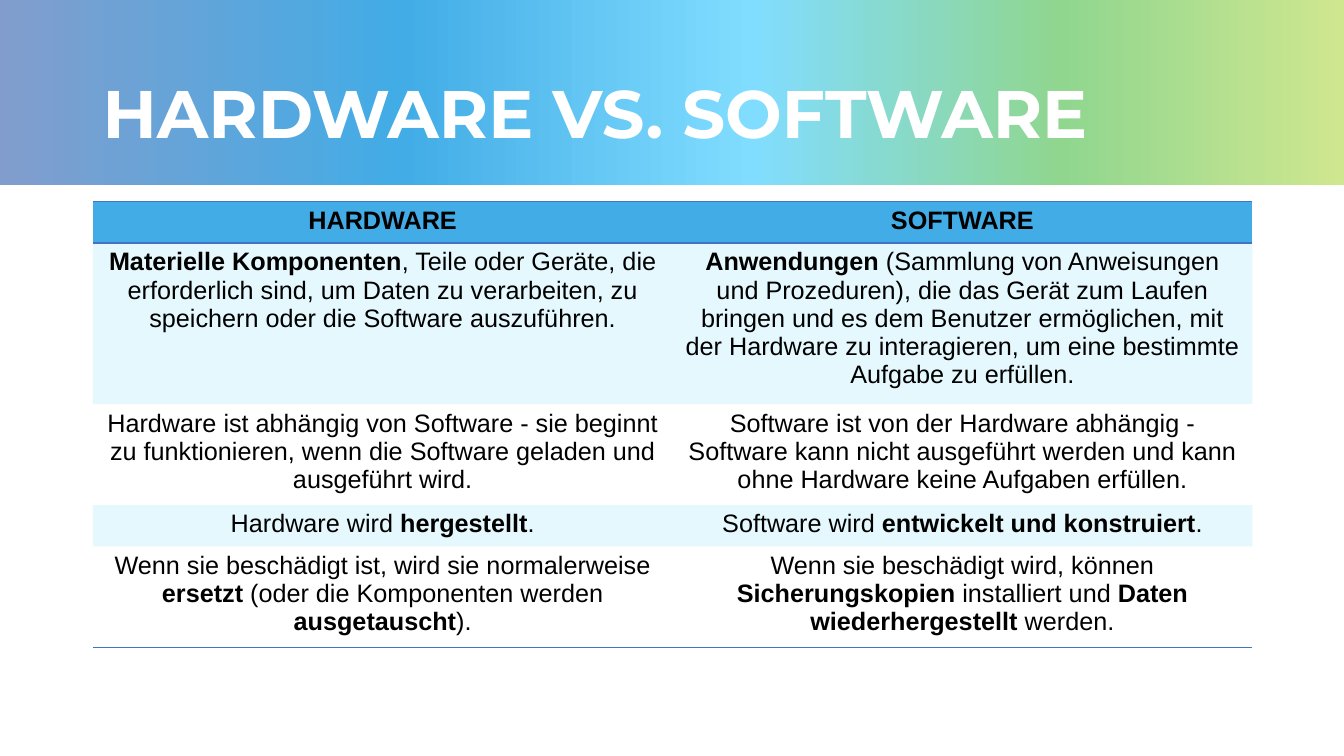
from dataclasses import dataclass

from lxml import etree
from pptx import Presentation
from pptx.dml.color import RGBColor
from pptx.enum.shapes import MSO_SHAPE
from pptx.enum.text import MSO_ANCHOR, PP_ALIGN
from pptx.oxml.ns import qn
from pptx.slide import Slide
from pptx.table import Table, _Cell
from pptx.util import Inches, Pt

RECTANGLE = MSO_SHAPE.RECTANGLE
MIDDLE = MSO_ANCHOR.MIDDLE
CENTER = PP_ALIGN.CENTER

WHITE = RGBColor(0xFF, 0xFF, 0xFF)
BLACK = RGBColor(0x00, 0x00, 0x00)
HEADER_BLUE = RGBColor(0x42, 0xAC, 0xE6)
BAND_BLUE = RGBColor(0x81, 0xDD, 0xFC)
BORDER_BLUE = RGBColor(0x44, 0x72, 0xC4)

PLAIN_TABLE_STYLE = "{2D5ABB26-0587-4C30-8999-92F81FD0307C}"
BAND_OPACITY = 20
MARGIN = 0.92


@dataclass(frozen=True)
class GradientStop:
    percent: int
    color: RGBColor


@dataclass(frozen=True)
class Comparison:
    """One table row; words between ** marks are bold."""
    hardware: str
    software: str


BANNER_STOPS = [
    GradientStop(0, RGBColor(0x81, 0x9D, 0xCD)),
    GradientStop(30, HEADER_BLUE),
    GradientStop(56, RGBColor(0x81, 0xDD, 0xFF)),
    GradientStop(79, RGBColor(0x90, 0xD6, 0x8F)),
    GradientStop(100, RGBColor(0xCF, 0xE7, 0x8F)),
]

COMPARISONS = [
    Comparison("**HARDWARE**", "**SOFTWARE**"),
    Comparison(
        "**Materielle Komponenten**, Teile oder Geräte, die erforderlich sind, "
        "um Daten zu verarbeiten, zu speichern oder die Software auszuführen.",
        "**Anwendungen** (Sammlung von Anweisungen und Prozeduren), die das Gerät "
        "zum Laufen bringen und es dem Benutzer ermöglichen, mit der Hardware zu "
        "interagieren, um eine bestimmte Aufgabe zu erfüllen."),
    Comparison(
        "Hardware ist abhängig von Software - sie beginnt zu funktionieren, "
        "wenn die Software geladen und ausgeführt wird.",
        "Software ist von der Hardware abhängig - Software kann nicht ausgeführt "
        "werden und kann ohne Hardware keine Aufgaben erfüllen."),
    Comparison("Hardware wird **hergestellt**.",
               "Software wird **entwickelt und konstruiert**."),
    Comparison(
        "Wenn sie beschädigt ist, wird sie normalerweise **ersetzt** "
        "(oder die Komponenten werden **ausgetauscht**).",
        "Wenn sie beschädigt wird, können **Sicherungskopien** installiert und "
        "**Daten wiederhergestellt** werden."),
]


def add_banner(page: Slide) -> None:
    banner = page.shapes.add_shape(
        RECTANGLE, Inches(0), Inches(-0.08), Inches(13.33), Inches(1.92))
    banner.shadow.inherit = False
    banner.line.fill.background()
    banner.fill.gradient()
    banner.fill.gradient_angle = 0
    stop_list = next(banner.element.iter(qn("a:gsLst")))
    for old_stop in list(stop_list):
        stop_list.remove(old_stop)
    for stop in BANNER_STOPS:
        node = etree.SubElement(stop_list, qn("a:gs"), pos=str(stop.percent * 1000))
        etree.SubElement(node, qn("a:srgbClr"), val=str(stop.color))


def add_title(page: Slide) -> None:
    box = page.shapes.add_textbox(
        Inches(MARGIN), Inches(0.32), Inches(11.5), Inches(1.67))
    frame = box.text_frame
    frame.word_wrap = True
    frame.vertical_anchor = MIDDLE
    frame.text = "HARDWARE VS. SOFTWARE"
    para = frame.paragraphs[0]
    para.line_spacing = 0.9
    font = para.runs[0].font
    font.name = "Montserrat"
    font.size = Pt(48)
    font.bold = True
    font.color.rgb = WHITE


def write_cell(cell: _Cell, marked_text: str) -> None:
    para = cell.text_frame.paragraphs[0]
    para.alignment = CENTER
    for index, words in enumerate(marked_text.split("**")):
        if not words:
            continue
        span = para.add_run()
        span.text = words
        span.font.name = "Arial"
        span.font.size = Pt(18)
        span.font.bold = index % 2 == 1
        span.font.color.rgb = BLACK


def fill_cell(cell: _Cell, row: int) -> None:
    """Solid header, then translucent bands on every second row."""
    if row % 2 == 0 and row > 0:
        cell.fill.background()
        return
    cell.fill.solid()
    cell.fill.fore_color.rgb = BAND_BLUE if row else HEADER_BLUE
    if row:
        color = next(cell.fill._xPr.iter(qn("a:srgbClr")))
        etree.SubElement(color, qn("a:alpha"), val=str(BAND_OPACITY * 1000))


def add_border(cell: _Cell, side: str) -> None:
    line = etree.Element(qn(f"a:ln{side}"), w=str(Pt(1)))
    fill = etree.SubElement(line, qn("a:solidFill"))
    etree.SubElement(fill, qn("a:srgbClr"), val=str(BORDER_BLUE))
    cell._tc.get_or_add_tcPr().insert(0, line)


def add_comparison_table(page: Slide) -> Table:
    row_height = 0.41
    last_row = len(COMPARISONS) - 1
    frame = page.shapes.add_table(
        len(COMPARISONS), 2, Inches(MARGIN), Inches(2),
        Inches(11.5), Inches(row_height * len(COMPARISONS)))
    next(frame._element.iter(qn("a:tableStyleId"))).text = PLAIN_TABLE_STYLE
    table = frame.table
    table.horz_banding = False
    for row, comparison in enumerate(COMPARISONS):
        for column, text in enumerate((comparison.hardware, comparison.software)):
            cell = table.cell(row, column)
            write_cell(cell, text)
            fill_cell(cell, row)
            if row in (0, last_row):
                add_border(cell, "B")
            if row == 0:
                add_border(cell, "T")
    return table


def main() -> None:
    deck = Presentation()
    deck.slide_width = Inches(13.33)
    deck.slide_height = Inches(7.5)
    page = deck.slides.add_slide(deck.slide_layouts[6])
    add_banner(page)
    add_title(page)
    add_comparison_table(page)
    deck.save("out.pptx")


if __name__ == "__main__":
    main()
